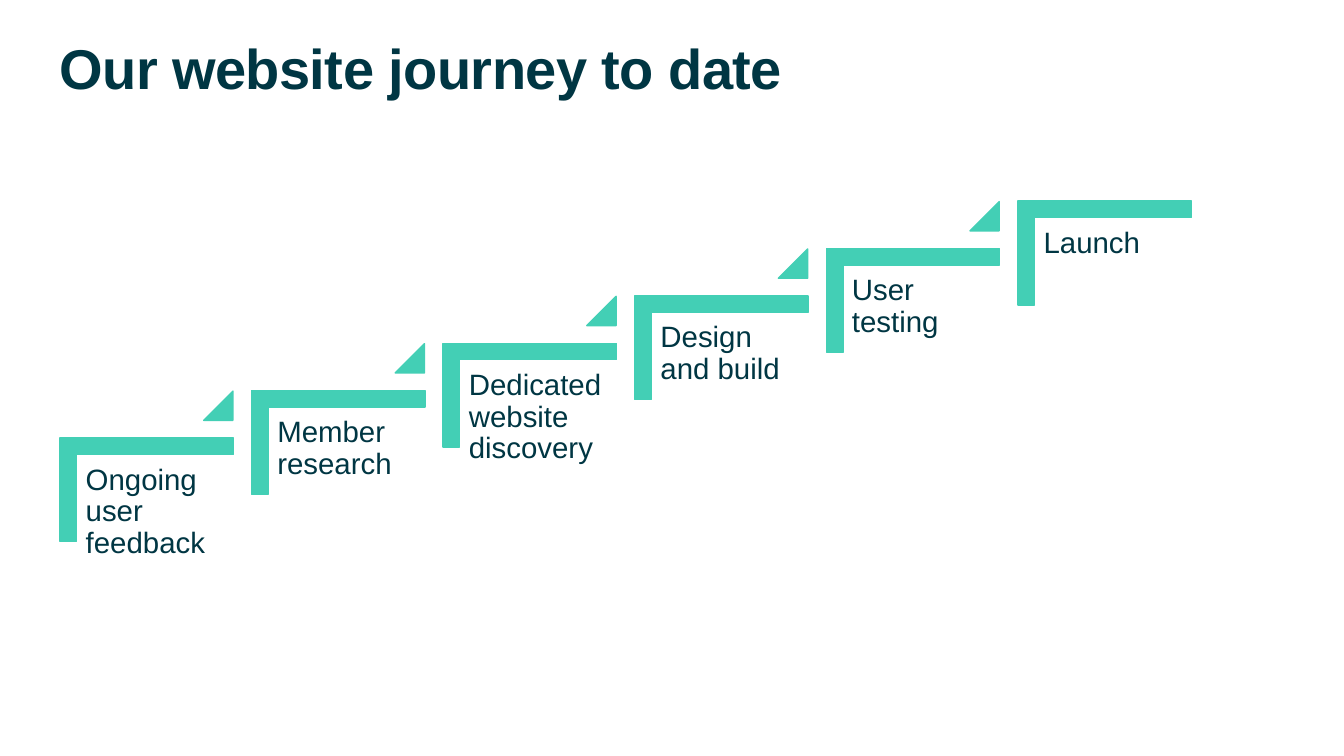
from dataclasses import dataclass

from pptx import Presentation
from pptx.dml.color import RGBColor
from pptx.enum.shapes import MSO_SHAPE
from pptx.enum.text import MSO_ANCHOR, MSO_AUTO_SIZE, PP_ALIGN
from pptx.util import Inches, Pt


@dataclass(frozen=True)
class Theme:
    ink: RGBColor = RGBColor(0x00, 0x36, 0x43)
    accent: RGBColor = RGBColor(0x43, 0xCF, 0xB5)
    face: str = "Arial"
    head: int = 40
    body: int = 21
    edge: int = 1


THEME = Theme()
STEPS = (
    "Ongoing user feedback",
    "Member research",
    "Dedicated website discovery",
    "Design and build",
    "User testing",
    "Launch",
)
LEFT, TOP = 0.94, 4.0
RUN, RISE = 1.9, 0.47


def assign(item, values):
    for name, value in values.items():
        setattr(item, name, value)


def write(shape, text, size, inset, bold=False):
    frame = shape.text_frame
    pad = Inches(inset)
    assign(frame, {
        "word_wrap": True,
        "auto_size": MSO_AUTO_SIZE.NONE,
        "vertical_anchor": MSO_ANCHOR.TOP,
        "margin_left": pad, "margin_right": pad,
        "margin_top": pad, "margin_bottom": pad,
    })
    frame.text = text
    para = frame.paragraphs[0]
    assign(para, {"alignment": PP_ALIGN.LEFT, "line_spacing": 0.9,
                  "space_before": Pt(0)})
    font = para.runs[0].font
    assign(font, {"name": THEME.face, "size": Pt(size), "bold": bold})
    font.color.rgb = THEME.ink


def add_title(slide, text):
    title = slide.shapes.title
    assign(title, {"left": Inches(0.59), "top": Inches(0.41),
                   "width": Inches(11.22), "height": Inches(0.79)})
    write(title, text, THEME.head, 0, bold=True)
    run = title.text_frame.paragraphs[0].runs[0]
    run.font._element.set("spc", "-40")


def add_mark(slide, kind, box, adjust, turn=0):
    mark = slide.shapes.add_shape(kind, *map(Inches, box))
    assign(mark, {"rotation": turn})
    mark.shadow.inherit = False
    mark.fill.solid()
    mark.fill.fore_color.rgb = THEME.accent
    mark.line.color.rgb = THEME.accent
    mark.line.width = Pt(THEME.edge)
    for spot, value in enumerate(adjust):
        mark.adjustments[spot] = value


def add_step(slide, text, left, top, last):
    """Draw one stair with its label, and a pointer up to the next stair."""
    add_mark(slide, MSO_SHAPE.CORNER, (left, top, 1.03, 1.72),
             (0.16, 0.16), turn=90)
    box = (left - 0.18, top + 0.52, 1.55, 1.36)
    label = slide.shapes.add_textbox(*map(Inches, box))
    write(label, text, THEME.body, 0.09)
    if not last:
        add_mark(slide, MSO_SHAPE.ISOSCELES_TRIANGLE,
                 (left + 1.08, top - 0.12, 0.29, 0.29), (1,))


def main():
    deck = Presentation()
    assign(deck, {"slide_width": Inches(13.33), "slide_height": Inches(7.5)})
    slide = deck.slides.add_slide(deck.slide_layouts[5])
    add_title(slide, "Our website journey to date")
    for count, text in enumerate(STEPS):
        add_step(slide, text, LEFT + count * RUN, TOP - count * RISE,
                 last=count == len(STEPS) - 1)
    deck.save("out.pptx")


if __name__ == "__main__":
    main()
